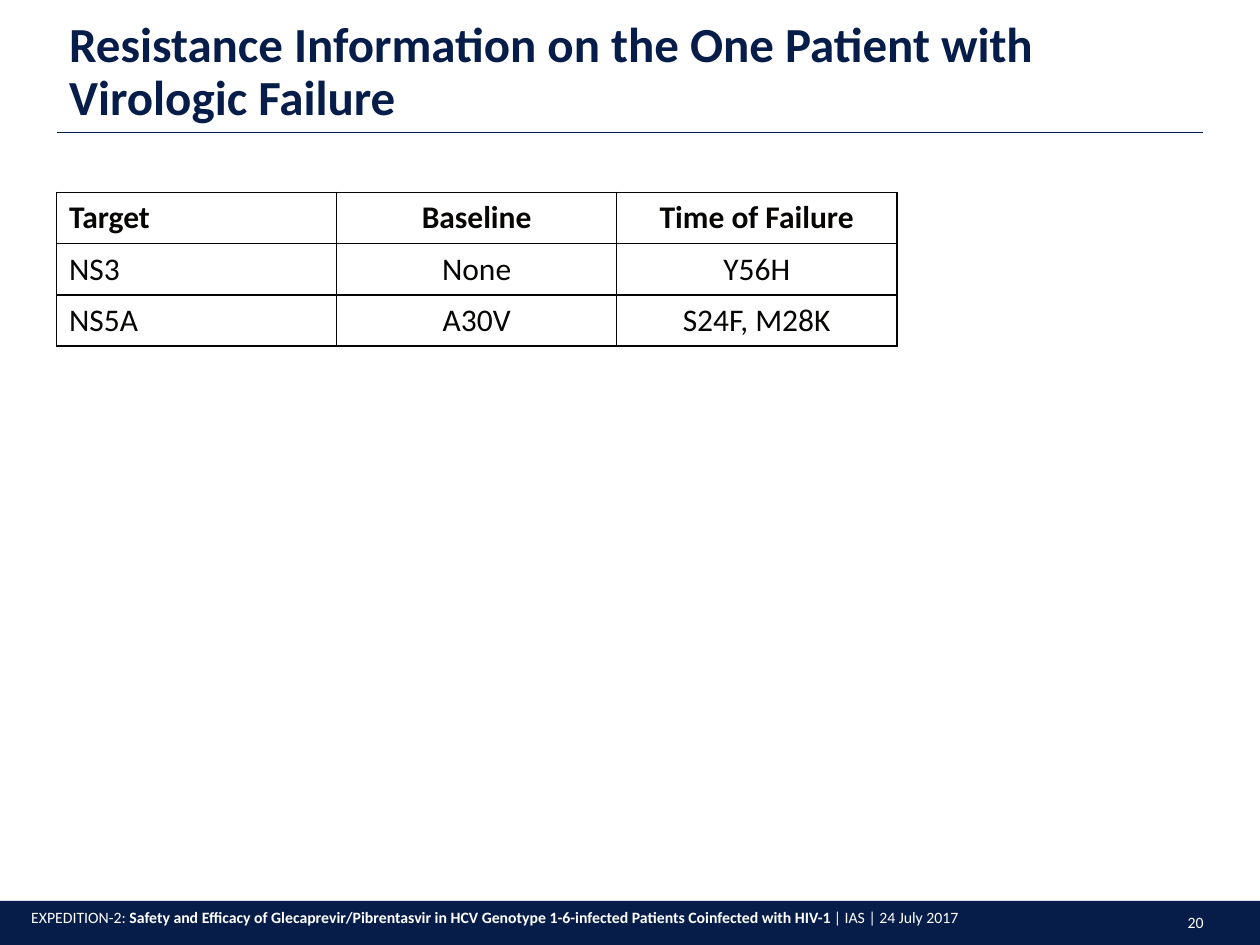
import dataclasses

import pptx
import pptx.dml.color
import pptx.enum.shapes
import pptx.enum.text
import pptx.oxml
import pptx.oxml.ns
import pptx.util

Cm = pptx.util.Cm
Align = pptx.enum.text.PP_ALIGN
Anchor = pptx.enum.text.MSO_ANCHOR
AutoSize = pptx.enum.text.MSO_AUTO_SIZE


@dataclasses.dataclass(frozen=True)
class Theme:
    font: str = "Calibri"
    navy: str = "071D49"
    ink: str = "070605"
    white: str = "FFFFFF"
    title_size: int = 28
    table_size: int = 18
    footer_size: int = 9
    rule_width: float = 0.75
    border_width: float = 1


@dataclasses.dataclass(frozen=True)
class Box:
    left: float
    top: float
    width: float
    height: float

    def lengths(self):
        return [Cm(value) for value in dataclasses.astuple(self)]


THEME = Theme()
TITLE = "Resistance Information on the One Patient with Virologic Failure"
RESISTANCE = [
    ["Target", "Baseline", "Time of Failure"],
    ["NS3", "None", "Y56H"],
    ["NS5A", "A30V", "S24F, M28K"],
]
STUDY = [
    ("EXPEDITION-2: ", False),
    ("Safety and Efficacy of Glecaprevir/Pibrentasvir in HCV Genotype "
     "1-6-infected Patients Coinfected with HIV-1 ", True),
    ("| IAS | 24 July 2017", False),
]
PAGE_NUMBER = [("20", False)]


def rgb(code):
    return pptx.dml.color.RGBColor.from_string(code)


def format_run(run, size, color, bold):
    run.font.name = THEME.font
    run.font.size = pptx.util.Pt(size)
    run.font.color.rgb = rgb(color)
    run.font.bold = bold


def place_title(slide, box):
    title = slide.shapes.title
    title.left, title.top, title.width, title.height = box.lengths()
    frame = title.text_frame
    frame.text = TITLE
    frame.word_wrap = True
    frame.auto_size = AutoSize.NONE
    frame.vertical_anchor = Anchor.BOTTOM
    heading = frame.paragraphs[0]
    heading.alignment = Align.LEFT
    heading.line_spacing = 0.9
    format_run(heading.runs[0], THEME.title_size, THEME.navy, True)

    left, right = Cm(box.left), Cm(box.left + box.width)
    bottom = Cm(box.top + box.height)
    rule = slide.shapes.add_connector(
        pptx.enum.shapes.MSO_CONNECTOR.STRAIGHT, left, bottom, right, bottom)
    rule.line.color.rgb = rgb(THEME.navy)
    rule.line.width = pptx.util.Pt(THEME.rule_width)
    rule._element.spPr.append(pptx.oxml.parse_xml(
        f"<a:effectLst {pptx.oxml.ns.nsdecls('a')}/>"))


def draw_borders(cell):
    properties = cell._tc.get_or_add_tcPr()
    width = pptx.util.Pt(THEME.border_width)
    for position, side in enumerate(("lnL", "lnR", "lnT", "lnB")):
        properties.insert(position, pptx.oxml.parse_xml(
            f'<a:{side} {pptx.oxml.ns.nsdecls("a")} w="{width}"><a:solidFill>'
            f'<a:srgbClr val="{THEME.ink}"/></a:solidFill></a:{side}>'))


def place_resistance(slide, box):
    row_count, column_count = len(RESISTANCE), len(RESISTANCE[0])
    table = slide.shapes.add_table(
        row_count, column_count, *box.lengths()).table
    table.first_row = table.horz_banding = False
    for column in table.columns:
        column.width = Cm(box.width / column_count)
    for row_index, values in enumerate(RESISTANCE):
        table.rows[row_index].height = Cm(box.height / row_count)
        for column_index, value in enumerate(values):
            cell = table.cell(row_index, column_index)
            cell.fill.background()
            draw_borders(cell)
            cell.text_frame.text = value
            entry = cell.text_frame.paragraphs[0]
            entry.alignment = Align.CENTER if column_index else Align.LEFT
            format_run(entry.runs[0], THEME.table_size, THEME.ink,
                       row_index == 0)


def add_footer_text(slide, box, parts, alignment):
    frame = slide.shapes.add_textbox(*box.lengths()).text_frame
    frame.word_wrap = True
    frame.auto_size = AutoSize.SHAPE_TO_FIT_TEXT
    line = frame.paragraphs[0]
    line.alignment = alignment
    line.line_spacing = 0.9
    for words, bold in parts:
        run = line.add_run()
        run.text = words
        format_run(run, THEME.footer_size, THEME.white, bold)


def place_footer(slide, box):
    band = slide.shapes.add_shape(
        pptx.enum.shapes.MSO_SHAPE.RECTANGLE, *box.lengths())
    band.shadow.inherit = False
    band.fill.solid()
    band.fill.fore_color.rgb = rgb(THEME.navy)
    band.line.fill.background()
    add_footer_text(
        slide, Box(box.left + box.width - 1.78, box.top + 0.15, 0.97, 0.61),
        PAGE_NUMBER, Align.CENTER)
    add_footer_text(
        slide, Box(box.left + 0.38, box.top + 0.05, 24.49, 0.61),
        STUDY, Align.LEFT)


def main():
    deck = pptx.Presentation()
    deck.slide_width, deck.slide_height = Cm(25.4), Cm(19.05)
    slide = deck.slides.add_slide(deck.slide_layouts[5])
    place_footer(slide, Box(0, 18.16, 25.4, 0.89))
    place_title(slide, Box(1.14, 0.7, 23.12, 1.97))
    place_resistance(slide, Box(1.14, 3.88, 16.94, 3.1))
    deck.save("out.pptx")


if __name__ == "__main__":
    main()
